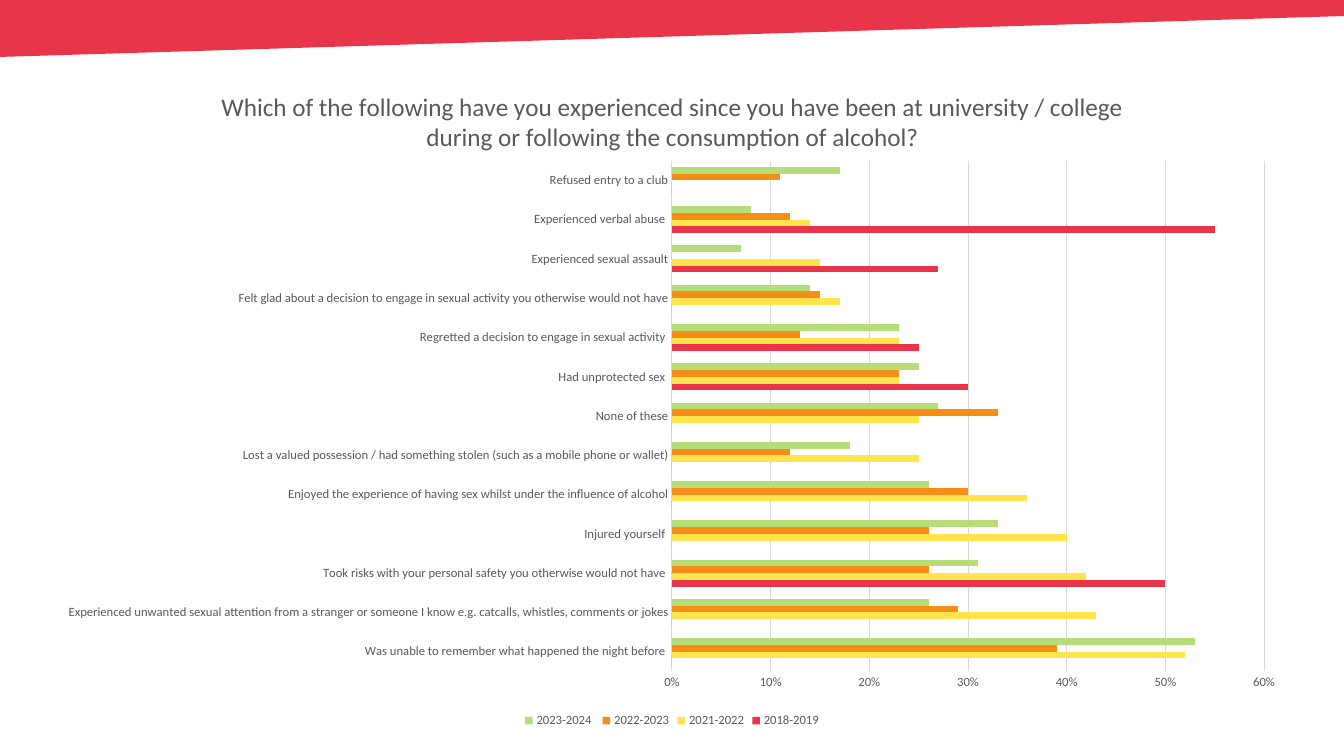
import pptx
import pptx.chart.data
import pptx.dml.color
import pptx.enum.chart
import pptx.oxml
import pptx.oxml.ns
import pptx.util

TITLE = ("Which of the following have you experienced since you have been at university / college\n"
         "during or following the consumption of alcohol?")

# Each row: answer, then shares for the years below
YEARS = {"2018-2019": "E9354A", "2021-2022": "FFE44D",
         "2022-2023": "F58D17", "2023-2024 ": "B7DD79"}
ROWS = [
    ("Was unable to remember what happened the night before ", 0, 0.52, 0.39, 0.53),
    ("Experienced unwanted sexual attention from a stranger or someone I know "
     "e.g. catcalls, whistles, comments or jokes", 0, 0.43, 0.29, 0.26),
    ("Took risks with your personal safety you otherwise would not have ", 0.5, 0.42, 0.26, 0.31),
    ("Injured yourself ", 0, 0.4, 0.26, 0.33),
    ("Enjoyed the experience of having sex whilst under the influence of alcohol",
     0, 0.36, 0.3, 0.26),
    ("Lost a valued possession / had something stolen (such as a mobile phone or wallet)",
     0, 0.25, 0.12, 0.18),
    ("None of these", 0, 0.25, 0.33, 0.27),
    ("Had unprotected sex ", 0.3, 0.23, 0.23, 0.25),
    ("Regretted a decision to engage in sexual activity ", 0.25, 0.23, 0.13, 0.23),
    ("Felt glad about a decision to engage in sexual activity you otherwise would not have",
     0, 0.17, 0.15, 0.14),
    ("Experienced sexual assault", 0.27, 0.15, 0, 0.07),
    ("Experienced verbal abuse ", 0.55, 0.14, 0.12, 0.08),
    ("Refused entry to a club", 0, 0, 0.11, 0.17),
]


def px(count):
    return pptx.util.Emu(round(count * 914400 / 100.8))


def rgb(code):
    return pptx.dml.color.RGBColor.from_string(code)


def place(node, index, box, inner=False):
    """Fix a chart part at fractions of the chart area."""
    for old in node.findall(pptx.oxml.ns.qn("c:layout")):
        node.remove(old)
    tags = [("layoutTarget", "inner")] if inner else []
    tags += [("xMode", "edge"), ("yMode", "edge")] + list(zip("xywh", box))
    body = "".join(f'<c:{tag} val="{val}"/>' for tag, val in tags)
    node.insert(index, pptx.oxml.parse_xml(
        f'<c:layout {pptx.oxml.ns.nsdecls("c")}><c:manualLayout>{body}'
        '</c:manualLayout></c:layout>'))


class Deck:
    face, ink, rule = "Calibri", "595959", "D9D9D9"

    def __init__(self, wide, high):
        self.file = pptx.Presentation()
        self.file.slide_width, self.file.slide_height = px(wide), px(high)
        self.slide = self.file.slides.add_slide(self.file.slide_layouts[6])

    def style(self, font, size):
        font.name, font.size, font.bold = self.face, pptx.util.Pt(size), False
        font.color.rgb = rgb(self.ink)

    def line(self, form):
        form.line.color.rgb = rgb(self.rule)
        form.line.width = pptx.util.Pt(0.75)

    def band(self, points, color):
        pen = self.slide.shapes.build_freeform(*points[0], scale=px(1))
        pen.add_line_segments(points[1:], close=True)
        shape = pen.convert_to_shape()
        shape.shadow.inherit = False
        shape.fill.solid()
        shape.fill.fore_color.rgb = rgb(color)
        shape.line.fill.background()

    def bars(self, left, top, wide, high):
        kinds = pptx.enum.chart
        data = pptx.chart.data.CategoryChartData(number_format="0%")
        names, *shares = zip(*ROWS)
        data.categories = names
        for year, share in zip(YEARS, shares):
            data.add_series(year, share)
        chart = self.slide.shapes.add_chart(
            kinds.XL_CHART_TYPE.BAR_CLUSTERED,
            px(left), px(top), px(wide), px(high), data).chart
        self.style(chart.font, 9)

        plot = chart.plots[0]
        plot.gap_width, plot.overlap, plot.vary_by_categories = 182, 0, False
        for series, color in zip(plot.series, YEARS.values()):
            series.format.fill.solid()
            series.format.fill.fore_color.rgb = rgb(color)
        place(chart._chartSpace.chart.plotArea, 0, (0.5, 0.15, 0.47, 0.76), inner=True)

        self.axes(chart)
        self.head(chart)
        chart.has_legend = True
        chart.legend.position = kinds.XL_LEGEND_POSITION.BOTTOM
        chart.legend.include_in_layout = False
        self.style(chart.legend.font, 9)

    def axes(self, chart):
        none = pptx.enum.chart.XL_TICK_MARK.NONE
        for axis in (chart.category_axis, chart.value_axis):
            axis.major_tick_mark = axis.minor_tick_mark = none
            self.style(axis.tick_labels.font, 9)
        self.line(chart.category_axis.format)
        value = chart.value_axis
        value.minimum_scale, value.maximum_scale, value.major_unit = 0, 0.6, 0.1
        value.format.line.fill.background()
        value.tick_labels.number_format = "0%"
        value.tick_labels.number_format_is_linked = False
        self.line(value.major_gridlines.format)

    def head(self, chart):
        chart.has_title = True
        frame = chart.chart_title.text_frame
        frame.text = TITLE
        for para in frame.paragraphs:
            self.style(para.font, 18)
            for run in para.runs:
                self.style(run.font, 18)
        chart.chart_title.include_in_layout = False
        place(chart.chart_title._element, 1, (0.14, 0.04))


def main():
    deck = Deck(1344, 756)
    deck.band([(-1, 0), (0, 57), (1346, 16), (1344, 0)], "E9354A")
    deck.bars(42, 60, 1260, 672)
    deck.file.save("out.pptx")


if __name__ == "__main__":
    main()
